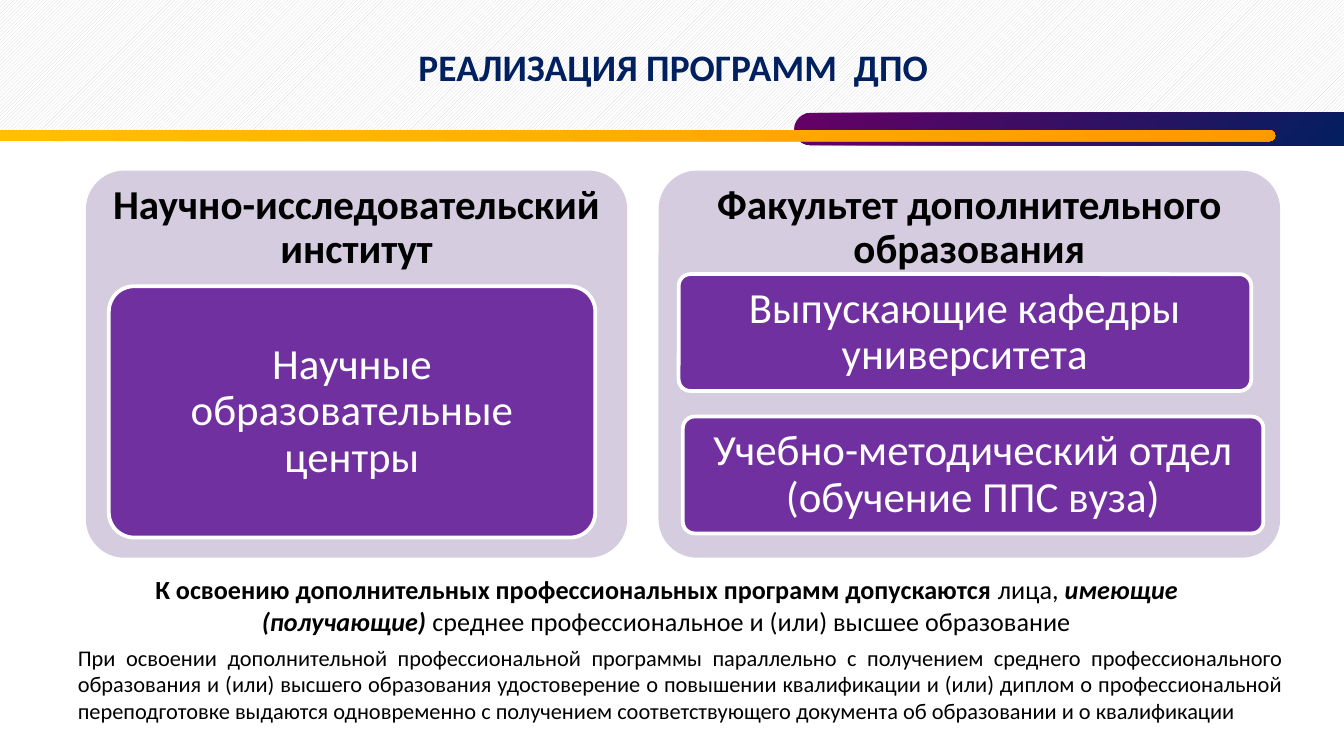
"""Builds a slide on how further professional education programmes are run."""
from pptx import Presentation
from pptx.dml.color import RGBColor
from pptx.enum.dml import MSO_PATTERN
from pptx.enum.shapes import MSO_SHAPE as Shape
from pptx.enum.text import MSO_ANCHOR as Anchor, PP_ALIGN as Align
from pptx.util import Pt

FONT = "Calibri"
COLORS = {
    "white": "FFFFFF", "black": "000000", "hatch": "D9D9D9", "navy": "002060",
    "plum": "660066", "orange": "FF9900", "yellow": "FFC000",
    "panel": "D5CDDF", "card": "7030A0",
}
PANEL_TOP, PANEL_HEIGHT, HEADING_HEIGHT = 91.4, 207.4, 62
PANELS = [
    ("Научно-исследовательский институт", 46, 290,
     [("Научные образовательные центры", (58.3, 153.4, 260.6, 134.6))]),
    ("Факультет дополнительного образования", 352.8, 333,
     [("Выпускающие кафедры университета", (363.6, 146.9, 306.7, 62.6)),
      ("Учебно-методический отдел (обучение ППС вуза)", (365.8, 223.2, 311, 62.6))]),
]
ADMISSION = [
    ("К освоению дополнительных профессиональных программ допускаются ", True, False),
    ("лица, ", False, False),
    ("имеющие (получающие) ", True, True),
    ("среднее профессиональное и (или) высшее образование", False, False),
]
CERTIFICATES = (
    "При освоении дополнительной профессиональной программы параллельно с получением "
    "среднего профессионального образования и (или) высшего образования удостоверение "
    "о повышении квалификации и (или) диплом о профессиональной переподготовке выдаются "
    "одновременно с получением соответствующего документа об образовании и о квалификации"
)


def color(name):
    return RGBColor.from_string(COLORS[name])


def add_block(page, frame, kind=Shape.ROUNDED_RECTANGLE, radius=0.1):
    block = page.shapes.add_shape(kind, *map(Pt, frame))
    block.shadow.inherit = False
    block.line.fill.background()
    if kind == Shape.ROUNDED_RECTANGLE:
        block.adjustments[0] = radius
    return block


def add_header(page):
    band = add_block(page, (0, 0, 720, 70.6), Shape.RECTANGLE)
    band.fill.patterned()
    band.fill.pattern = MSO_PATTERN.LIGHT_UPWARD_DIAGONAL
    band.fill.fore_color.rgb = color("hatch")
    band.fill.back_color.rgb = color("white")
    add_bar(page, (425.5, 60.5, 303.1, 17.3), ("plum", "navy"), 315)
    add_bar(page, (-5.8, 69.8, 689, 5.8), ("yellow", "orange"), 45)


def add_bar(page, frame, shades, angle):
    bar = add_block(page, frame, radius=0.5)
    bar.fill.gradient()
    bar.fill.gradient_angle = angle
    for stop, shade in zip(bar.fill.gradient_stops, shades):
        stop.color.rgb = color(shade)


def set_text(box, spans, size, shade, align=Align.CENTER, anchor=Anchor.MIDDLE,
             insets=(7.2, 3.6), spacing=None):
    frame = box.text_frame
    frame.word_wrap = True
    frame.vertical_anchor = anchor
    frame.margin_left = frame.margin_right = Pt(insets[0])
    frame.margin_top = frame.margin_bottom = Pt(insets[1])
    para = frame.paragraphs[0]
    para.alignment, para.line_spacing = align, spacing
    para.font.name, para.font.size = FONT, Pt(size)
    para.font.color.rgb = color(shade)
    for text, bold, italic in spans:
        span = para.add_run()
        span.text = text
        span.font.bold, span.font.italic = bold, italic


def add_text(page, frame, spans, size, shade="black", **layout):
    set_text(page.shapes.add_textbox(*map(Pt, frame)), spans, size, shade, **layout)


def add_card(page, text, frame):
    card = add_block(page, frame)
    card.fill.solid()
    card.fill.fore_color.rgb = color("card")
    card.line.color.rgb = color("white")
    card.line.width = Pt(2)
    set_text(card, [(text, False, False)], 23, "white", insets=(4.6, 3.5), spacing=0.9)


def add_panel(page, heading, left, width, cards):
    panel = add_block(page, (left, PANEL_TOP, width, PANEL_HEIGHT))
    panel.fill.solid()
    panel.fill.fore_color.rgb = color("panel")
    add_text(page, (left, PANEL_TOP, width, HEADING_HEIGHT), [(heading, True, False)],
             22, insets=(6.6, 6.6), spacing=0.9)
    for text, frame in cards:
        add_card(page, text, frame)


def main():
    deck = Presentation()
    deck.slide_width, deck.slide_height = Pt(720), Pt(405)
    page = deck.slides.add_slide(deck.slide_layouts[6])
    add_header(page)
    add_text(page, (20.2, 7.9, 681, 83.5 - 28), [("РЕАЛИЗАЦИЯ ПРОГРАММ  ДПО", True, False)],
             20, "navy")
    for panel in PANELS:
        add_panel(page, *panel)
    add_text(page, (49.7, 303.8, 614.9, 41), ADMISSION, 14, anchor=Anchor.TOP)
    add_text(page, (34.6, 341.3, 660.2, 51.1), [(CERTIFICATES, False, False)], 12,
             align=Align.JUSTIFY, anchor=Anchor.TOP)
    deck.save("out.pptx")


if __name__ == "__main__":
    main()
